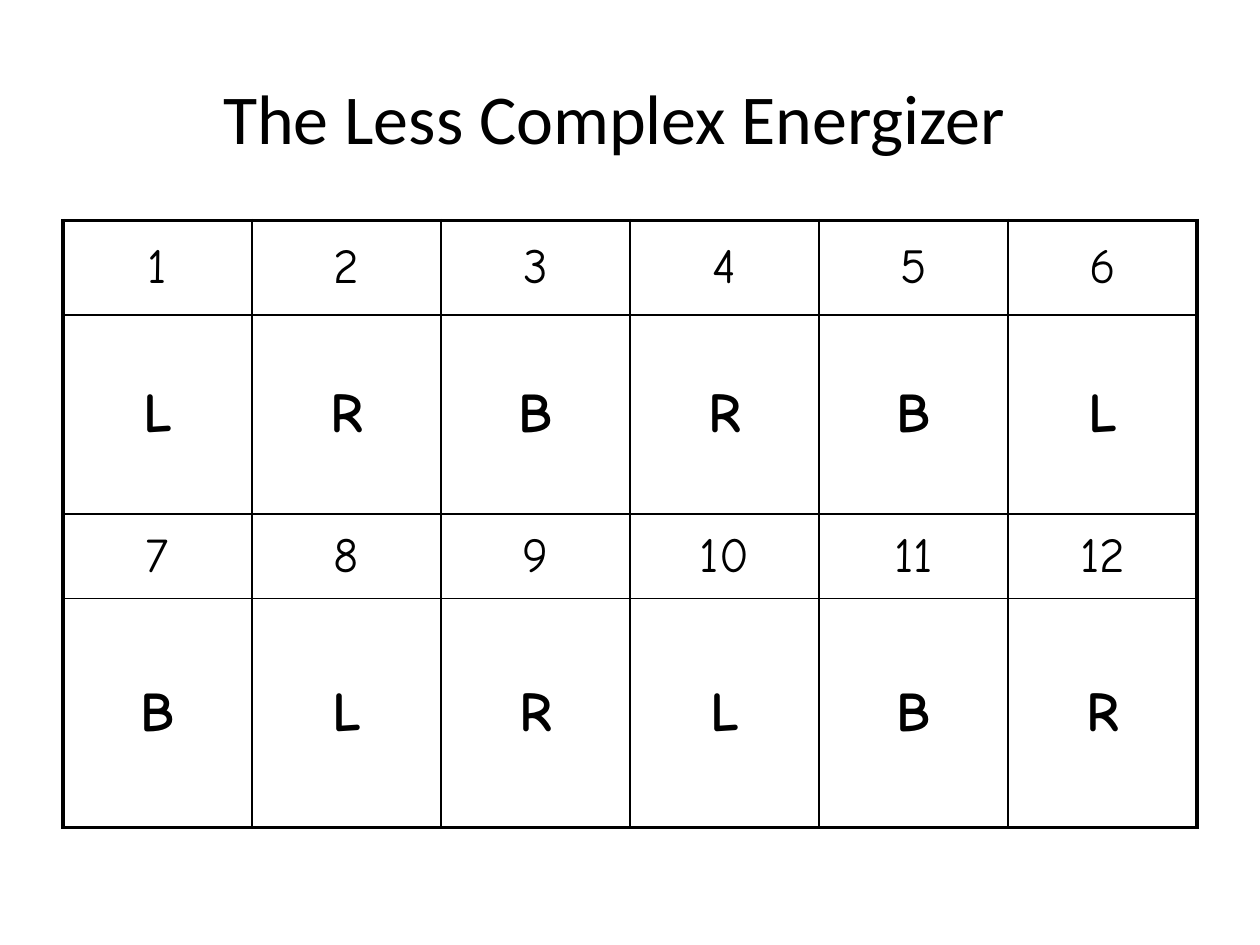
from lxml.etree import SubElement as Sub
from pptx import Presentation
from pptx.dml.color import RGBColor as RGB
from pptx.enum.text import MSO_ANCHOR as Anchor, PP_ALIGN as Align
from pptx.oxml.ns import qn
from pptx.util import Inches, Pt

INK = "000000"
THIN, THICK = 1, 2.25
COLS, WIDE = 6, 1.5
HIGH = [0.75, 1.58, 0.67, 1.82]
ROWS = [
    ["1", "2", "3", "4", "5", "6"],
    ["L", "R", "B", "R", "B", "L"],
    ["7", "8", "9", "10", "11", "12"],
    ["B", "L", "R", "L", "B", "R"],
]
NUMBER = {"name": "Comic Neue", "size": Pt(28), "bold": False}
LETTER = {"name": "Comic Neue", "size": Pt(32), "bold": True}
TITLE = {"name": "Calibri", "size": Pt(40), "bold": False}


def style(par, look):
    """Centre a paragraph and apply the font values in look."""
    par.alignment = Align.CENTER
    for run in par.runs:
        for key, val in look.items():
            setattr(run.font, key, val)
        run.font.color.rgb = RGB.from_string(INK)


def edge(cell, side, width):
    """Draw one border line of a cell; side is L, R, T or B."""
    line = Sub(cell._tc.get_or_add_tcPr(), qn(f"a:ln{side}"), w=str(Pt(width)))
    Sub(Sub(line, qn("a:solidFill")), qn("a:srgbClr"), val=INK)


prs = Presentation()
prs.slide_width, prs.slide_height = Inches(10), Inches(7.5)
slide = prs.slides.add_slide(prs.slide_layouts[5])

title = slide.shapes.title
title.left, title.top = Inches(0.5), Inches(0.3)
title.width, title.height = Inches(9), Inches(1.25)
frame = title.text_frame
frame.text = "The Less Complex Energizer"
frame.vertical_anchor = Anchor.MIDDLE
frame.margin_right = Inches(0.35)
style(frame.paragraphs[0], TITLE)

grid = slide.shapes.add_table(
    len(ROWS), COLS, Inches(0.5), Inches(1.75), Inches(COLS * WIDE), Inches(sum(HIGH))
).table
grid.first_row = grid.horz_banding = False
for col in grid.columns:
    col.width = Inches(WIDE)

for r, words in enumerate(ROWS):
    grid.rows[r].height = Inches(HIGH[r])
    look = LETTER if r % 2 else NUMBER
    for c, word in enumerate(words):
        cell = grid.cell(r, c)
        cell.text = word
        cell.vertical_anchor = Anchor.MIDDLE
        par = cell.text_frame.paragraphs[0]
        par.space_before = Pt(look["size"].pt * 0.2)
        style(par, look)
        outer = {"L": c == 0, "R": c == COLS - 1, "T": r == 0, "B": r == len(ROWS) - 1}
        for side, rim in outer.items():
            edge(cell, side, THICK if rim else THIN)
        cell.fill.background()

prs.save("out.pptx")
